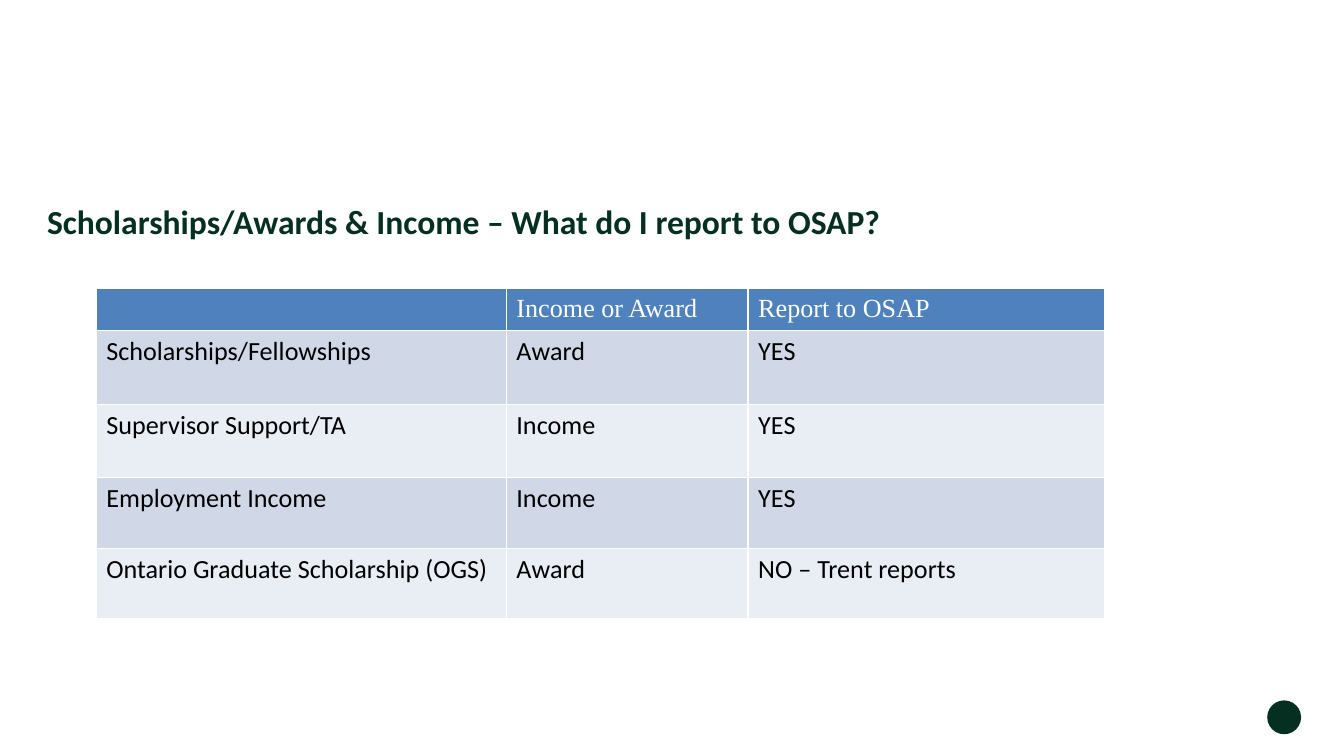
"""Build the OSAP slide on reporting scholarships, awards and income."""
from lxml import etree
from pptx import Presentation
from pptx.dml.color import RGBColor
from pptx.enum import shapes, text
from pptx.oxml import ns
from pptx.util import Cm, Pt

GREEN = RGBColor(0x05, 0x30, 0x21)
BLUE = RGBColor(0x4F, 0x81, 0xBD)
BANDS = [RGBColor(0xE9, 0xED, 0xF4), RGBColor(0xD0, 0xD8, 0xE8)]
WHITE = RGBColor(0xFF, 0xFF, 0xFF)
BLACK = RGBColor(0x00, 0x00, 0x00)

TITLE = {"name": "Calibri", "size": Pt(18), "bold": True}
HEADER = {"name": "Times New Roman", "size": Pt(14), "bold": False}
BODY = {"name": "Calibri", "size": Pt(14), "bold": False}
INSETS = {"margin_left": Cm(0.19), "margin_right": Cm(0.19),
          "margin_top": Cm(0.1), "margin_bottom": Cm(0.1)}

COLS = [7.75, 4.57, 6.73]
HEIGHTS = [0.77, 1.4, 1.38, 1.34, 1.33]
ROWS = [
    ["", "Income or Award", "Report to OSAP"],
    ["Scholarships/Fellowships", "Award", "YES"],
    ["Supervisor Support/TA", "Income", "YES"],
    ["Employment Income", "Income", "YES"],
    ["Ontario Graduate Scholarship (OGS)", "Award", "NO – Trent reports"],
]


def write(p, words, style, color):
    r = p.add_run()
    r.text = words
    for key, value in style.items():
        setattr(r.font, key, value)
    r.font.color.rgb = color


def add_borders(cell):
    pr = cell._tc.get_or_add_tcPr()
    for i, side in enumerate(["lnL", "lnR", "lnT", "lnB"]):
        ln = etree.Element(ns.qn(f"a:{side}"), w=str(Pt(1)))
        fill = etree.SubElement(ln, ns.qn("a:solidFill"))
        etree.SubElement(fill, ns.qn("a:srgbClr"), val=str(WHITE))
        pr.insert(i, ln)


prs = Presentation()
prs.slide_width, prs.slide_height = Cm(25.4), Cm(14.28)
s = prs.slides.add_slide(prs.slide_layouts[6])

sp = s.shapes.add_shape(shapes.MSO_SHAPE.OVAL, Cm(23.95), Cm(13.23), Cm(0.64), Cm(0.64))
sp.shadow.inherit = False
sp.fill.solid()
sp.fill.fore_color.rgb = GREEN
sp.line.fill.background()

tf = s.shapes.add_textbox(Cm(0.38), Cm(3.63), Cm(23.75), Cm(1.22)).text_frame
frame = {"word_wrap": True, "vertical_anchor": text.MSO_ANCHOR.MIDDLE,
         "margin_left": Cm(0.51), "margin_right": Cm(0.51),
         "margin_top": Cm(0.25), "margin_bottom": Cm(0.25)}
for key, value in frame.items():
    setattr(tf, key, value)
p = tf.paragraphs[0]
p.line_spacing = 0.8
write(p, "Scholarships/Awards & Income – What do I report to OSAP?", TITLE, GREEN)

table = s.shapes.add_table(len(ROWS), len(COLS), Cm(1.82), Cm(5.45),
                           Cm(sum(COLS)), Cm(sum(HEIGHTS))).table
for col, width in zip(table.columns, COLS):
    col.width = Cm(width)
for i, (row, height) in enumerate(zip(ROWS, HEIGHTS)):
    table.rows[i].height = Cm(height)
    style, color, fill = (BODY, BLACK, BANDS[i % 2]) if i else (HEADER, WHITE, BLUE)
    for j, words in enumerate(row):
        cell = table.cell(i, j)
        for key, value in INSETS.items():
            setattr(cell, key, value)
        cell.fill.solid()
        cell.fill.fore_color.rgb = fill
        add_borders(cell)
        p = cell.text_frame.paragraphs[0]
        if words:
            write(p, words, style, color)
        else:
            etree.SubElement(p._p, ns.qn("a:endParaRPr"), sz="1400")

prs.save("out.pptx")
